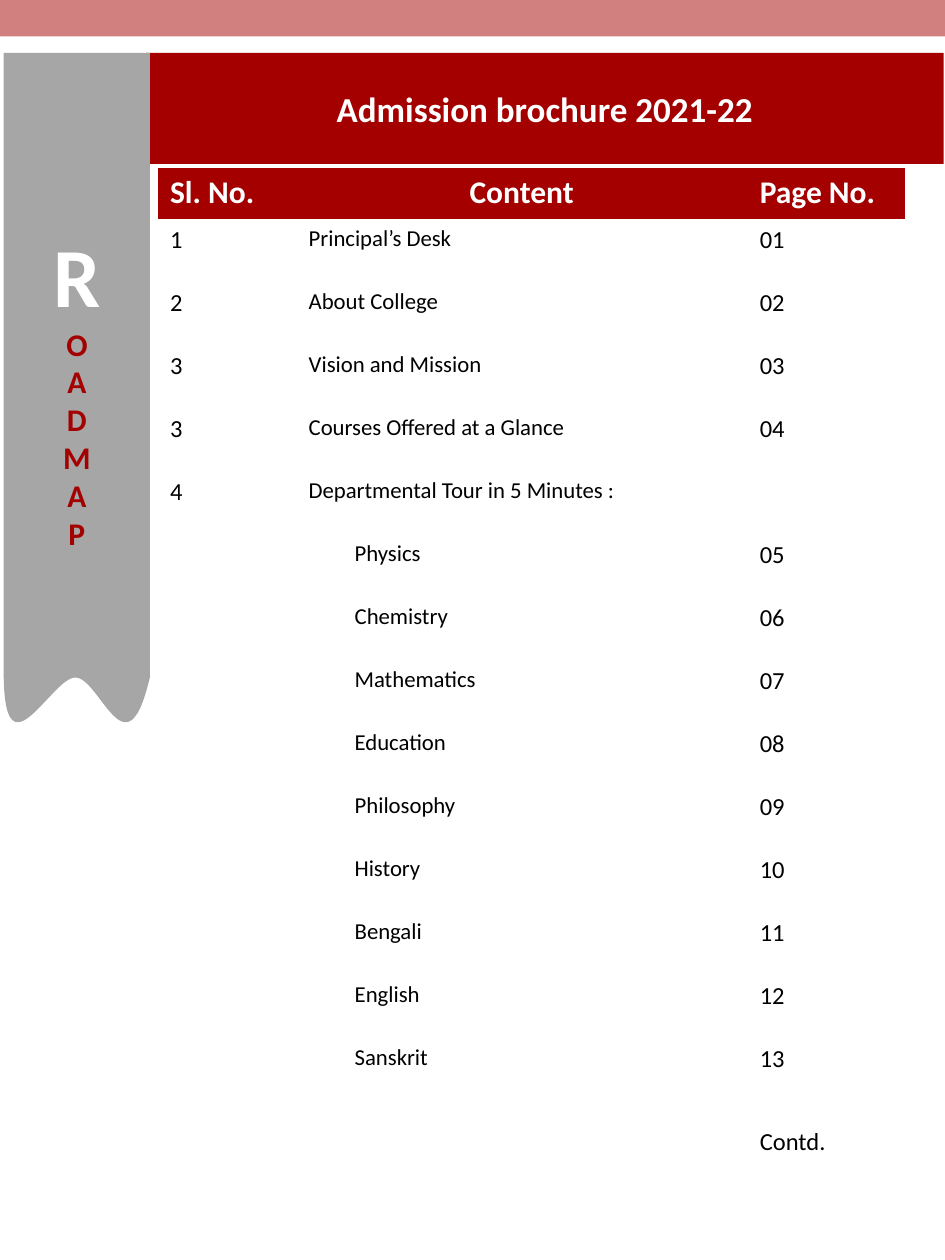
from pptx import Presentation, util as u
from pptx.dml.color import RGBColor
from pptx.enum import shapes, text
from pptx.oxml import ns
from lxml import etree

RED = RGBColor(0xA4, 0x00, 0x00)
GREY = RGBColor(0xA6, 0xA6, 0xA6)
WHITE = RGBColor(0xFF, 0xFF, 0xFF)
BLACK = RGBColor(0, 0, 0)
COLS, ROWS = 75, 100
CELL = u.Inches(0.1)
PLAIN_STYLE = "{2D5ABB26-0587-4C30-8999-92F81FD0307C}"
HEADINGS = ("Sl. No.", "Content", "Page No.")
SECTIONS = [
    ("1", "Principal’s Desk", "01"),
    ("2", "About College", "02"),
    ("3", "Vision and Mission", "03"),
    ("3", "Courses Offered at a Glance", "04"),
    ("4", "Departmental Tour in 5 Minutes :", ""),
]
DEPARTMENTS = ["Physics", "Chemistry", "Mathematics", "Education", "Philosophy",
               "History", "Bengali", "English", "Sanskrit"]


def grid(*cells):
    return [round(c * CELL) for c in cells]


def write(p, words, size, color, bold=False):
    r = p.add_run()
    r.text = words
    fmt = {"name": "Calibri", "size": u.Pt(size), "bold": bold}
    for key, value in fmt.items():
        setattr(r.font, key, value)
    r.font.color.rgb = color


def paint(sp, color):
    sp.fill.solid()
    sp.fill.fore_color.rgb = color
    sp.line.fill.background()


def top_band(s, box):
    sp = s.shapes.add_shape(shapes.MSO_SHAPE.RECTANGLE, *grid(*box))
    sp.shadow.inherit = False
    paint(sp, RED)
    clr = sp.fill._xPr.find(".//" + ns.qn("a:srgbClr"))
    etree.SubElement(clr, ns.qn("a:alpha"), val="50000")


def banner(s, box):
    sp = s.shapes.title
    sp.left, sp.top, sp.width, sp.height = grid(*box)
    paint(sp, RED)
    tf = sp.text_frame
    fmt = {"auto_size": text.MSO_AUTO_SIZE.NONE, "word_wrap": True,
           "vertical_anchor": text.MSO_ANCHOR.MIDDLE}
    for key, value in fmt.items():
        setattr(tf, key, value)
    p = tf.paragraphs[0]
    p.alignment = text.PP_ALIGN.CENTER
    write(p, "Admission brochure 2021-22", 20, WHITE, True)


def curve(a, b, c, d, steps=24):
    for i in range(1, steps + 1):
        t = i / steps
        k = ((1 - t) ** 3, 3 * t * (1 - t) ** 2, 3 * t * t * (1 - t), t ** 3)
        yield tuple(sum(w * q[n] for w, q in zip(k, (a, b, c, d))) for n in (0, 1))


def ribbon(s, box):
    x, y, w, h = box

    def at(fx, fy):
        return x + fx * w, y + fy * h

    right, crest, left = at(1, 0.93), at(0.49, 0.93), at(0, 0.93)
    outline = [at(1, 0), right,
               *curve(right, at(0.84, 1.08), at(0.66, 0.93), crest),
               *curve(crest, at(0.33, 0.93), at(0.01, 1.08), left)]
    fb = s.shapes.build_freeform(*grid(x, y))
    fb.add_line_segments([grid(*pt) for pt in outline], close=True)
    sp = fb.convert_to_shape()
    sp.shadow.inherit = False
    paint(sp, GREY)
    tf = sp.text_frame
    tf.vertical_anchor = text.MSO_ANCHOR.MIDDLE
    tf._txBody.bodyPr.set("vert", "wordArtVert")
    p = tf.paragraphs[0]
    p.alignment = text.PP_ALIGN.CENTER
    write(p, "R", 48, WHITE, True)
    write(p, "OADMAP", 18, RED, True)


def contents(s, box):
    rows = [HEADINGS, *SECTIONS]
    rows += [("", name, f"{n:02}") for n, name in enumerate(DEPARTMENTS, 5)]
    rows.append(("", "", "Contd."))
    tb = s.shapes.add_table(len(rows), len(HEADINGS), *grid(*box)).table
    tb.horz_banding = False
    tb._tbl.tblPr.find(ns.qn("a:tableStyleId")).text = PLAIN_STYLE
    for col, width in zip(tb.columns, grid(11, 35.8, 12.5)):
        col.width = width
    heights = [4] + [5] * (len(rows) - 3) + [6.6] * 2
    for row, height in zip(tb.rows, grid(*heights)):
        row.height = height
    for i, row in enumerate(rows):
        for j, words in enumerate(row):
            cell = tb.cell(i, j)
            p = cell.text_frame.paragraphs[0]
            if i == 0:
                cell.fill.solid()
                cell.fill.fore_color.rgb = RED
                if j == 1:
                    p.alignment = text.PP_ALIGN.CENTER
                write(p, words, 18, WHITE, True)
                continue
            cell.fill.background()
            if words:
                if words in DEPARTMENTS:
                    p._p.get_or_add_pPr().set("marL", str(grid(3.65)[0]))
                write(p, words, 13 if j == 1 else 14, BLACK)


def main():
    prs = Presentation()
    prs.slide_width, prs.slide_height = grid(COLS, ROWS)
    s = prs.slides.add_slide(prs.slide_layouts[5])
    top_band(s, (-0.2, -0.2, 75.2, 3.1))
    banner(s, (11.6, 4.2, 63.3, 8.8))
    ribbon(s, (0.3, 4.2, 11.6, 53.3))
    contents(s, (12.5, 13.3, 59.3, 82))
    prs.save("out.pptx")


if __name__ == "__main__":
    main()
